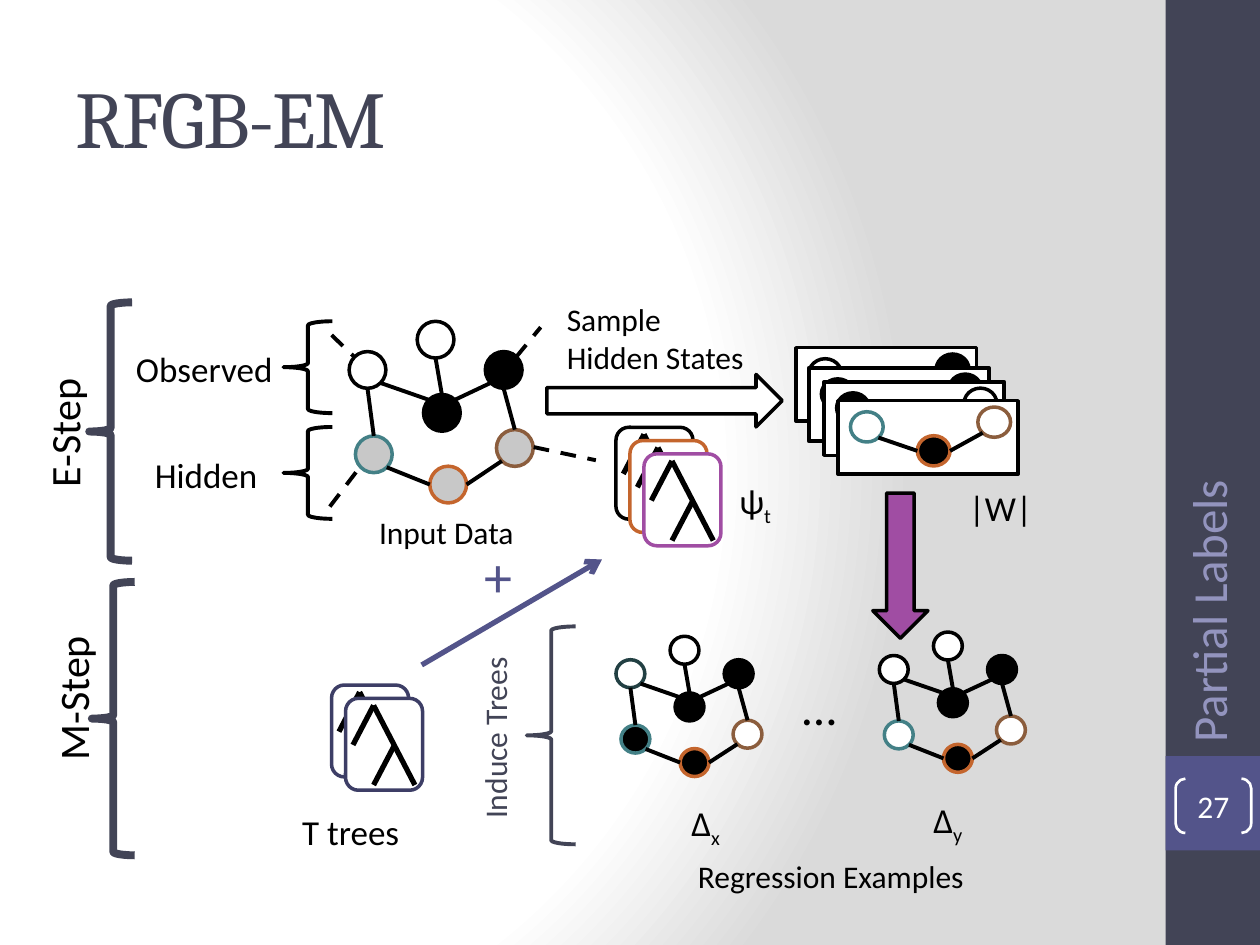
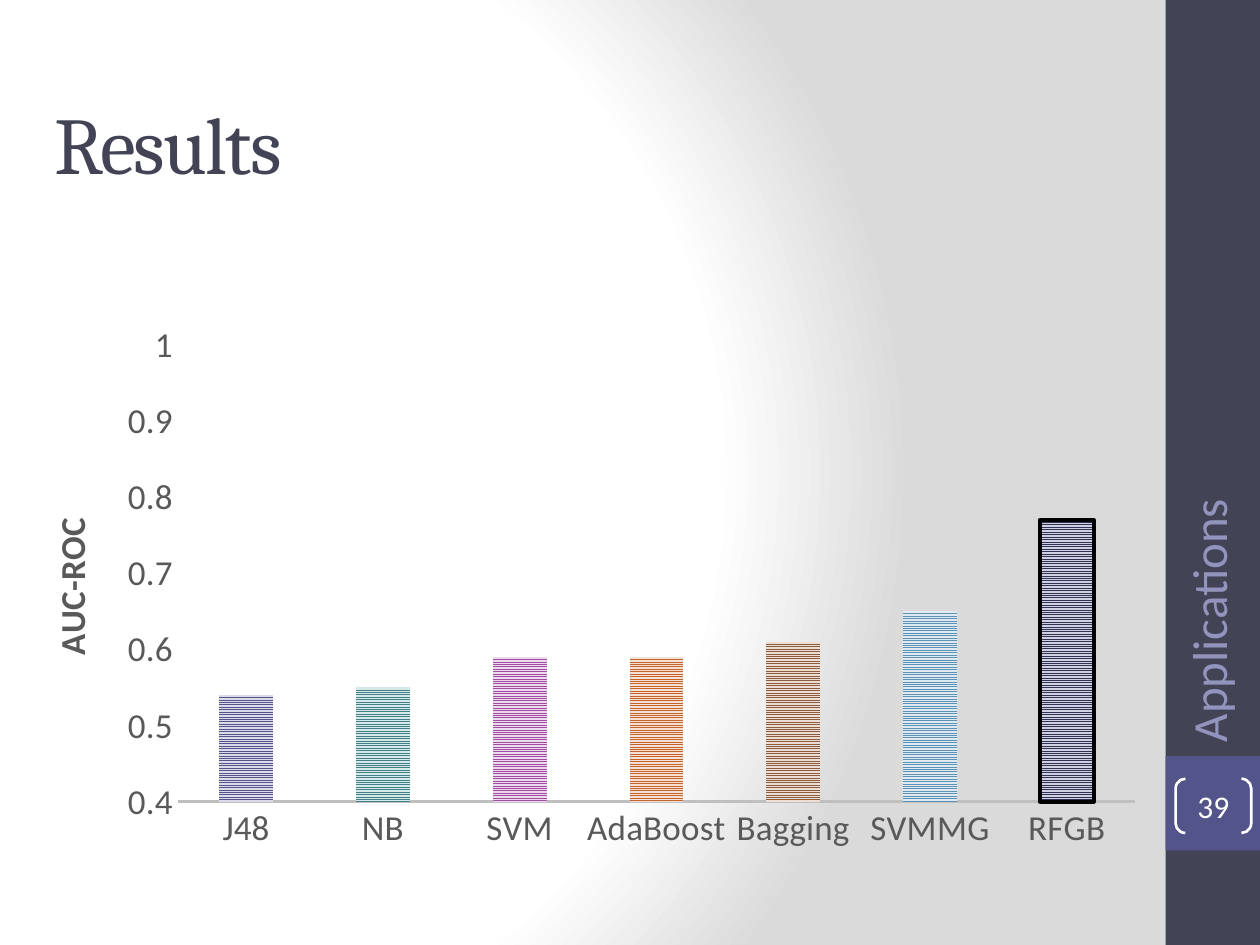
import math

import pptx
import pptx.chart.data
import pptx.dml.color
import pptx.enum.chart
import pptx.enum.dml
import pptx.enum.shapes
import pptx.enum.text
import pptx.oxml
import pptx.oxml.ns
import pptx.util
from lxml import etree

Pt = pptx.util.Pt
SHAPE = pptx.enum.shapes.MSO_SHAPE
ALIGN = pptx.enum.text.PP_ALIGN
ANCHOR = pptx.enum.text.MSO_ANCHOR

# ---------- Content: all lengths in points ----------
COLOURS = {
    "black": "000000", "white": "FFFFFF", "grey": "C8C8C8", "shade": "DADADA",
    "slate": "424456", "indigo": "53548A", "navy": "3D3E66", "lilac": "9394BE",
    "teal": "438086", "deep teal": "224043", "orange": "C4652D",
    "brown": "8B5D3D", "purple": "A04DA3", "axis text": "595959", "axis": "BFBFBF",
}
BODY, HEADING = "Calibri", "Cambria"
BANDS = [((666, 0, 54, 540), "slate"), ((666, 432, 54, 54), "indigo")]

# Network: top left of each node, then edges as (node, angle, node, angle)
NETWORK_NODES = [(0, 17.3), (38.9, 0), (42.5, 41.8), (77.8, 17.3),
                 (3.6, 65.5), (46.1, 82.8), (84.2, 61.9)]
NETWORK_EDGES = [(0, 45, 2, 225), (1, 90, 2, 270), (3, 135, 2, 315), (0, 90, 4, 270),
                 (4, 45, 5, 180), (5, 0, 6, 135), (3, 90, 6, 270)]
NETWORKS = [  # origin, scale, node size, fills, outlines
    ((352, 363.6), (0.795, 0.775), (16.5, 16),
     "white white black black black black white",
     ["deep teal", "black", "black", "black", "teal", "orange", "brown"]),
    ((502.5, 361.2), (0.795, 0.775), (16.5, 16),
     "white white black black white black white",
     ["black"] * 4 + ["teal", "orange", "brown"]),
    ((199.5, 183.6), (1, 1), (21, 21),
     "white white black black grey grey grey",
     ["black"] * 4 + ["teal", "orange", "brown"]),
]
DASHES = [(295, 204, 309, 187), (305, 255.5, 340.5, 263),
          (189.5, 191.5, 202.5, 204), (188.5, 289.5, 206, 266.5)]

# Sampled worlds: card origin, then fill and outline by node number
WORLD_SIZE, WORLD_NODE_SIZE = (103, 42), (18.7, 17.3)
WORLD_NODES = [(7.2, 6.3), (45.4, 20), (80, 3.6)]
WORLD_EDGES = [(0, 45, 1, 180), (1, 0, 2, 135)]
WORLDS = [
    ((455, 198.7), {0: ("white", "black"), 2: ("black", "black")}),
    ((462.2, 210.2), {0: ("black", "black"), 2: ("black", "black")}),
    ((470.9, 218.2), {0: ("black", "black"), 2: ("white", "black")}),
    ((478.8, 229), {0: ("white", "teal"), 1: ("black", "orange"), 2: ("white", "brown")}),
]

# Stacks of tree cards: origin of the back card, outlines from back to front
TREE_STEP, TREE_SIZE = (8, 7.6), (44, 52.5)
TREE_BRANCHES = [(16, 4, 39.6, 49.5), (16, 4, 4.2, 26.6), (28, 26.6, 16, 49.5)]
TREE_STACKS = [((352, 244.2), ["black", "orange", "purple"]),
               ((189.5, 391.5), ["navy", "navy"])]

BRACES = [((301, 358, 28, 124.5), "slate", 2.25), ((162, 244, 28, 52.5), "black", 2.25),
          ((162, 183.6, 28, 52.5), "black", 2.25), ((51, 172.8, 24.5, 147.6), "slate", 4.5),
          ((52.5, 332.6, 24.5, 156.2), "slate", 4.5)]
BLOCK_ARROWS = [((312.5, 214, 134.5, 30), "white", 0), ((473, 307.5, 83, 31.5), "purple", 90)]

LABELS = [  # text, box, format
    ("Δ", (388, 454.3, 68, 32), {"subscript": "x"}),
    ("Δ", (526.3, 452.9, 44, 32), {"subscript": "y"}),
    ("ψ", (415.4, 270.7, 55, 32), {"subscript": "t"}),
    ("…", (451.4, 383, 32, 41), {"size": 28}),
    ("Observed", (70.6, 195, 99, 32), {}),
    ("Hidden", (81.4, 255.6, 88, 32), {}),
    ("|W|", (546.5, 274.3, 60, 32), {}),
    ("Sample\nHidden States", (316.8, 167.8, 127, 51), {"size": 18}),
    ("+", (270, 306, 32, 46), {"size": 32, "colour": "indigo"}),
    ("Input Data", (209.5, 289.4, 107, 29), {"size": 18}),
    ("Regression Examples", (391.7, 486, 186.5, 29), {"size": 18}),
    ("Induce Trees", (223.2, 401, 119, 29), {"size": 18, "colour": "slate", "rotation": 270}),
    ("T trees", (165.6, 459.4, 72, 32), {"wrap": False}),
    ("E-Step", (-22.3, 208.8, 117.4, 36), {"size": 24, "rotation": 270}),
    ("M-Step", (-17.3, 365, 117.4, 36), {"size": 24, "rotation": 270}),
]

CHART_BOX = (0, 180, 660, 322)
PLOT_AREA = {"x": 0.154, "y": 0.053, "w": 0.829, "h": 0.811}
RESULTS = [  # method, AUC-ROC, stripe colour, ground colour
    ("J48", 0.54, "53548A", "DBDBE9"), ("NB", 0.55, "438086", "D6E9EA"),
    ("SVM", 0.59, "A04DA3", "EDDAEE"), ("AdaBoost", 0.59, "C4652D", "F5E0D3"),
    ("Bagging", 0.61, "8B5D3D", "ECDED4"), ("SVMMG", 0.65, "5C92B5", "DEE9F0"),
    ("RFGB", 0.77, "323253", "D0D0E3"),
]


# ---------- Helpers ----------
def rgb(colour):
    return pptx.dml.color.RGBColor.from_string(COLOURS.get(colour, colour))


def style_font(font, size, colour, name=BODY, bold=False):
    font.size, font.name, font.bold = Pt(size), name, bold
    font.color.rgb = rgb(colour)


def write(frame, text, size=20, colour="black", font=BODY, align=ALIGN.LEFT,
          anchor=ANCHOR.TOP, wrap=True, subscript="", spacing=0):
    frame.word_wrap, frame.vertical_anchor = wrap, anchor
    for number, line in enumerate(text.split("\n")):
        paragraph = frame.paragraphs[0] if number == 0 else frame.add_paragraph()
        paragraph.alignment = align
        for piece, baseline in ((line, 0), (subscript, -25000)):
            if not piece:
                continue
            run = paragraph.add_run()
            run.text = piece
            style_font(run.font, size, colour, font)
            properties = run.font._element
            if baseline:
                properties.set("baseline", str(baseline))
            if spacing:
                properties.set("spc", str(spacing))


def add_text(slide, text, box, rotation=0, **text_format):
    shape = slide.shapes.add_textbox(*map(Pt, box))
    shape.rotation = rotation
    write(shape.text_frame, text, **text_format)


def add_shape(slide, kind, box, fill=None, line=None, width=2, rotation=0):
    shape = slide.shapes.add_shape(kind, *map(Pt, box))
    shape.shadow.inherit = False
    shape.rotation = rotation
    if fill:
        shape.fill.solid()
        shape.fill.fore_color.rgb = rgb(fill)
    else:
        shape.fill.background()
    if line:
        shape.line.color.rgb = rgb(line)
        shape.line.width = Pt(width)
    else:
        shape.line.fill.background()
    return shape


def add_line(slide, ends, colour="black", width=2.25, dashed=False, arrow=False):
    connector = slide.shapes.add_connector(
        pptx.enum.shapes.MSO_CONNECTOR.STRAIGHT, *map(Pt, ends))
    connector.line.color.rgb = rgb(colour)
    connector.line.width = Pt(width)
    if dashed:
        connector.line.dash_style = pptx.enum.dml.MSO_LINE.DASH
    if arrow:
        etree.SubElement(connector.line._get_or_add_ln(),
                         pptx.oxml.ns.qn("a:tailEnd"), type="arrow")
    etree.SubElement(connector._element.spPr, pptx.oxml.ns.qn("a:effectLst"))


def rim(box, angle):
    """Point on the outline of the ellipse in box, clockwise from the right."""
    left, top, width, height = box
    turn = math.radians(angle)
    return (left + width / 2 * (1 + math.cos(turn)), top + height / 2 * (1 + math.sin(turn)))


def add_graph(slide, boxes, looks, edges):
    """Draw the nodes that have a look, and the edges between them."""
    for node, (fill, outline) in looks.items():
        add_shape(slide, SHAPE.OVAL, boxes[node], fill, outline)
    for start, start_angle, end, end_angle in edges:
        if start in looks and end in looks:
            add_line(slide, rim(boxes[start], start_angle) + rim(boxes[end], end_angle))


def node_boxes(origin, nodes, size, scale=(1, 1)):
    return [(origin[0] + x * scale[0], origin[1] + y * scale[1], *size) for x, y in nodes]


# ---------- Shared frame of both slides ----------
def add_slide(presentation, title, title_box, section, number):
    slide = presentation.slides.add_slide(presentation.slide_layouts[6])
    slide.background.fill.solid()
    background = slide.background._cSld.bg.bgPr
    stops = "".join(
        f'<a:gs pos="{position}"><a:srgbClr val="{COLOURS[colour]}"/></a:gs>'
        for position, colour in ((0, "white"), (75000, "white"), (100000, "shade")))
    gradient = pptx.oxml.parse_xml(
        f'<a:gradFill {pptx.oxml.ns.nsdecls("a")} rotWithShape="1"><a:gsLst>{stops}</a:gsLst>'
        '<a:path path="circle"><a:fillToRect l="20000" t="50000" r="100000" b="50000"/>'
        '</a:path></a:gradFill>')
    background.replace(background[0], gradient)

    for box, fill in BANDS:
        add_shape(slide, SHAPE.RECTANGLE, box, fill)
    add_text(slide, title, title_box, size=46, colour="slate", font=HEADING,
             anchor=ANCHOR.MIDDLE, spacing=-100)
    add_text(slide, section, (548, 268.5, 284.4, 41), rotation=270, size=28, colour="lilac")
    badge = add_shape(slide, SHAPE.DOUBLE_BRACKET, (671.8, 445, 43.2, 31),
                      line="white", width=1.5)
    badge.adjustments[0] = 0.18
    frame = badge.text_frame
    frame.margin_left = frame.margin_right = frame.margin_top = frame.margin_bottom = 0
    write(frame, str(number), size=18, colour="white", align=ALIGN.CENTER, anchor=ANCHOR.MIDDLE)
    return slide


# ---------- Slide: the EM procedure ----------
def build_procedure(presentation):
    slide = add_slide(presentation, "RFGB-EM", (36, 21.6, 600, 90), "Partial Labels", 27)

    for origin, looks in WORLDS:
        add_shape(slide, SHAPE.RECTANGLE, origin + WORLD_SIZE, "white", "black")
        add_graph(slide, node_boxes(origin, WORLD_NODES, WORLD_NODE_SIZE), looks, WORLD_EDGES)

    for origin, scale, size, fills, outlines in NETWORKS:
        looks = dict(enumerate(zip(fills.split(), outlines)))
        add_graph(slide, node_boxes(origin, NETWORK_NODES, size, scale), looks, NETWORK_EDGES)
    for ends in DASHES:
        add_line(slide, ends, dashed=True)

    for (left, top), outlines in TREE_STACKS:
        for level, outline in enumerate(outlines):
            x, y = left + level * TREE_STEP[0], top + level * TREE_STEP[1]
            add_shape(slide, SHAPE.ROUNDED_RECTANGLE, (x, y, *TREE_SIZE), "white", outline)
            in_front = level == len(outlines) - 1
            for x1, y1, x2, y2 in TREE_BRANCHES if in_front else TREE_BRANCHES[:2]:
                add_line(slide, (x + x1, y + y1, x + x2, y + y2), width=3)

    for box, colour, width in BRACES:
        add_shape(slide, SHAPE.LEFT_BRACE, box, line=colour, width=width)
    for box, fill, rotation in BLOCK_ARROWS:
        add_shape(slide, SHAPE.RIGHT_ARROW, box, fill, "black", rotation=rotation)
    add_line(slide, (241, 380, 344, 319.7), "indigo", 3, arrow=True)
    for text, box, text_format in LABELS:
        add_text(slide, text, box, **text_format)


# ---------- Slide: results chart ----------
def build_results(presentation):
    slide = add_slide(presentation, "Results", (23.8, 41.8, 572.4, 78.5), "Applications", 39)
    data = pptx.chart.data.CategoryChartData()
    data.categories = [method for method, *_ in RESULTS]
    data.add_series("Series 1", [score for _, score, *_ in RESULTS])
    chart = slide.shapes.add_chart(pptx.enum.chart.XL_CHART_TYPE.COLUMN_CLUSTERED,
                                   *map(Pt, CHART_BOX), data).chart
    chart.has_title = chart.has_legend = False
    style_font(chart.font, 20, "black")

    plot = chart.plots[0]
    plot.gap_width, plot.overlap, plot.vary_by_categories = 155, -55, False
    for number, (_, _, stripe, ground) in enumerate(RESULTS):
        fill = plot.series[0].points[number].format.fill
        fill.patterned()
        fill.pattern = pptx.enum.dml.MSO_PATTERN.NARROW_HORIZONTAL
        fill.fore_color.rgb, fill.back_color.rgb = rgb(stripe), rgb(ground)
    highlight = plot.series[0].points[len(RESULTS) - 1].format.line
    highlight.color.rgb, highlight.width = rgb("black"), Pt(2.25)

    # Axes
    methods, scores = chart.category_axis, chart.value_axis
    for axis in (methods, scores):
        axis.major_tick_mark = axis.minor_tick_mark = pptx.enum.chart.XL_TICK_MARK.NONE
        axis.has_major_gridlines = False
        style_font(axis.tick_labels.font, 20, "axis text")
    methods.format.line.color.rgb, methods.format.line.width = rgb("axis"), Pt(1.5)
    scores.format.line.fill.background()
    scores.minimum_scale, scores.maximum_scale, scores.major_unit = 0.4, 1, 0.1
    title = scores.axis_title.text_frame
    title.text = "AUC-ROC"
    style_font(title.paragraphs[0].runs[0].font, 20, "axis text", bold=True)

    # Fixed inner plot area
    plot_area = chart._chartSpace.chart.plotArea
    for old_layout in plot_area.findall(pptx.oxml.ns.qn("c:layout")):
        plot_area.remove(old_layout)
    sizes = "".join(f'<c:{key} val="{value}"/>' for key, value in PLOT_AREA.items())
    plot_area.insert(0, pptx.oxml.parse_xml(
        f'<c:layout {pptx.oxml.ns.nsdecls("c")}><c:manualLayout><c:layoutTarget val="inner"/>'
        f'<c:xMode val="edge"/><c:yMode val="edge"/>{sizes}</c:manualLayout></c:layout>'))


def main():
    presentation = pptx.Presentation()
    presentation.slide_width, presentation.slide_height = Pt(720), Pt(540)
    build_procedure(presentation)
    build_results(presentation)
    presentation.save("out.pptx")


if __name__ == "__main__":
    main()
